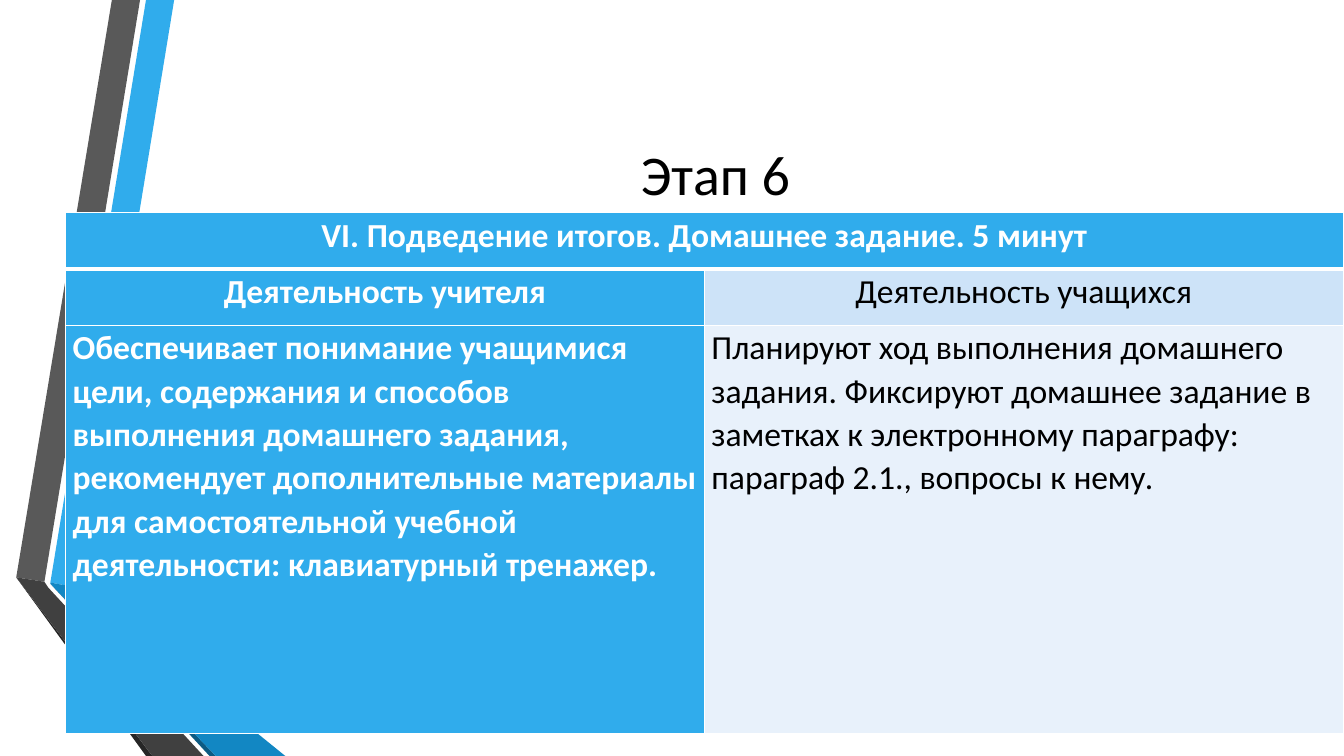
from lxml import etree
from pptx import Presentation
from pptx.dml.color import RGBColor
from pptx.enum.text import MSO_ANCHOR, PP_ALIGN
from pptx.oxml.ns import qn
from pptx.util import Cm, Pt

CENTER = PP_ALIGN.CENTER
LEFT = PP_ALIGN.LEFT
MIDDLE = MSO_ANCHOR.MIDDLE

BLACK = RGBColor(0x00, 0x00, 0x00)
WHITE = RGBColor(0xFF, 0xFF, 0xFF)
BLUE = RGBColor(0x30, 0xAC, 0xEC)
MID_BLUE = RGBColor(0x12, 0x87, 0xC3)
DARK_BLUE = RGBColor(0x0C, 0x5A, 0x82)
PALE_BLUE = RGBColor(0xCD, 0xE3, 0xF8)
PALEST_BLUE = RGBColor(0xE8, 0xF1, 0xFB)
GRAY = RGBColor(0x59, 0x59, 0x59)
DARK_GRAY = RGBColor(0x40, 0x40, 0x40)
DARKEST_GRAY = RGBColor(0x26, 0x26, 0x26)
FONT = "Calibri"


def add_text(para, text, size, color, bold=False):
    span = para.add_run()
    span.text = text
    span.font.name = FONT
    span.font.size = Pt(size)
    span.font.bold = bold
    span.font.color.rgb = color


def set_borders(cell, widths):
    properties = cell._tc.get_or_add_tcPr()
    for position, (side, width) in enumerate(widths.items()):
        line = etree.Element(qn(f"a:ln{side}"), w=str(Pt(width)))
        fill = etree.SubElement(line, qn("a:solidFill"))
        etree.SubElement(fill, qn("a:srgbClr"), val=str(WHITE))
        properties.insert(position, line)


deck = Presentation()
deck.slide_width = Cm(33.87)
deck.slide_height = Cm(19.05)
page = deck.slides.add_slide(deck.slide_layouts[5])

ribbons = [
    (BLUE, [(1.27, 14.68), (1.96, 14.81), (4.39, 0), (3.68, 0)]),
    (GRAY, [(3.53, 0), (2.82, 0), (0.41, 14.55), (1.12, 14.66)]),
    (DARKEST_GRAY, [(0.41, 14.55), (3.68, 19.05), (3.84, 19.05)]),
    (DARK_BLUE, [(1.27, 14.71), (5.28, 19.05), (5.44, 19.05)]),
    (MID_BLUE, [(1.27, 14.71), (5.44, 19.05), (7.19, 19.05), (1.96, 14.81), (1.27, 14.68)]),
    (DARK_GRAY, [(5.13, 19.05), (1.22, 14.81), (1.12, 14.66), (0.41, 14.55), (3.84, 19.05)]),
]
for color, corners in ribbons:
    points = [(Cm(x), Cm(y)) for x, y in corners]
    outline = page.shapes.build_freeform(*points[0])
    outline.add_line_segments(points[1:], close=True)
    ribbon = outline.convert_to_shape()
    ribbon.shadow.inherit = False
    ribbon.fill.solid()
    ribbon.fill.fore_color.rgb = color
    ribbon.line.fill.background()

title = page.shapes.title
title.left, title.top, title.width, title.height = Cm(4.11), Cm(1.91), Cm(27.84), Cm(4.88)
title.text_frame.vertical_anchor = MIDDLE
title_para = title.text_frame.paragraphs[0]
title_para.alignment = CENTER
add_text(title_para, "Этап 6", 40, BLACK)

row_heights = [1.42, 1.42, 10.29]
column_width = 16.1
table = page.shapes.add_table(
    3, 2, Cm(1.65), Cm(5.36), Cm(2 * column_width), Cm(sum(row_heights))
).table
for column in table.columns:
    column.width = Cm(column_width)
for row, height in zip(table.rows, row_heights):
    row.height = Cm(height)
table.cell(0, 0).merge(table.cell(0, 1))

stage_rows = [
    ("VI. Подведение итогов. Домашнее задание. 5 минут", ""),
    ("Деятельность учителя", "Деятельность учащихся"),
    (
        "Обеспечивает понимание учащимися цели, содержания и способов выполнения "
        "домашнего задания, рекомендует дополнительные материалы для самостоятельной "
        "учебной деятельности: клавиатурный тренажер.",
        "Планируют ход выполнения домашнего задания. Фиксируют домашнее задание в "
        "заметках к электронному параграфу: параграф 2.1., вопросы к нему.",
    ),
]
row_fills = [(BLUE, BLUE), (BLUE, PALE_BLUE), (BLUE, PALEST_BLUE)]
for row_index, (texts, fills) in enumerate(zip(stage_rows, row_fills)):
    for column_index, (text, color) in enumerate(zip(texts, fills)):
        cell = table.cell(row_index, column_index)
        cell.margin_left = cell.margin_right = Cm(0.18)
        cell.margin_top = cell.margin_bottom = 0
        cell.fill.solid()
        cell.fill.fore_color.rgb = color
        top = 3 if row_index == 1 else 1
        bottom = 3 if row_index == 0 else 1
        set_borders(cell, {"L": 1, "R": 1, "T": top, "B": bottom})
        if text:
            para = cell.text_frame.paragraphs[0]
            para.alignment = LEFT if row_index == 2 else CENTER
            para.line_spacing = 1.06
            on_blue = color == BLUE
            add_text(para, text, 24, WHITE if on_blue else BLACK, on_blue)

deck.save("out.pptx")
